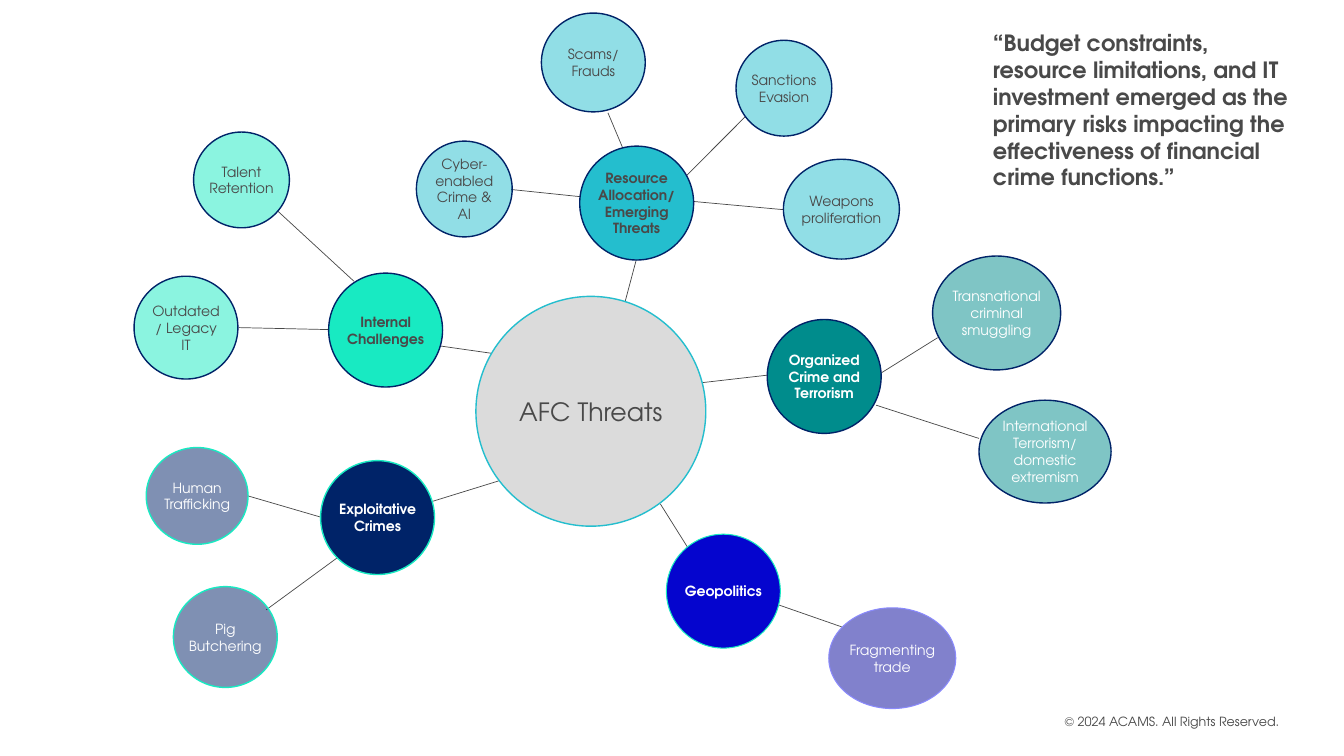
from pptx import Presentation
from pptx.dml.color import RGBColor
from pptx.enum import shapes, text
from pptx.oxml.ns import qn
from pptx.util import Inches, Pt
from lxml import etree

FONT = "TeX Gyre Adventor"
GREY = RGBColor(0x49, 0x49, 0x49)
WHITE = RGBColor(0xFF, 0xFF, 0xFF)
PALE = RGBColor(0xDB, 0xDB, 0xDB)
NAVY = RGBColor(0x00, 0x23, 0x68)
MINT = RGBColor(0x18, 0xEA, 0xC2)
AQUA = RGBColor(0x24, 0xBE, 0xCE)
TEAL = RGBColor(0x00, 0x8C, 0x8C)
BLUE = RGBColor(0x05, 0x05, 0xCE)
INDIGO = RGBColor(0x04, 0x04, 0x9A)
LILAC = RGBColor(0x8A, 0x8A, 0xFC)

HUB = 1.13  # diameter of a threat group

# Each group: label, (left, top), link to the centre,
# (fill, line, text) of the group, (fill, line) of its leaves, line width,
# leaves as (label, box, link to the group)
GROUPS = [
    ("Internal Challenges", (3.26, 2.71), (5.33, 3.57, 4.35, 3.43),
     (MINT, NAVY, GREY), (MINT, NAVY), 1, [
         ("Outdated/ Legacy IT", (1.33, 2.74, 1.03, 1.02), (3.26, 3.27, 2.37, 3.25)),
         ("Talent Retention", (1.92, 1.31, 0.95, 0.95), (3.51, 2.79, 2.75, 2.09))]),
    ("Exploitative Crimes", (3.18, 4.57), (5.37, 4.64, 4.27, 4.98),
     (NAVY, MINT, WHITE), (NAVY, MINT), 1, [
         ("Pig Butchering", (1.72, 5.82, 1.03, 1), (3.35, 5.53, 2.64, 6.05)),
         ("Human Trafficking", (1.45, 4.44, 1.01, 0.96), (3.18, 5.13, 2.46, 4.92))]),
    ("Resource Allocation/Emerging Threats", (5.75, 1.45), (6.15, 3.18, 6.31, 2.58),
     (AQUA, NAVY, GREY), (AQUA, NAVY), 1, [
         ("Scams/ Frauds", (5.37, 0.13, 1.03, 0.98), (6.19, 1.5, 6.03, 1.12)),
         ("Cyber-enabled Crime & AI", (4.13, 1.4, 0.95, 0.95), (5.84, 1.96, 5.07, 1.88)),
         ("Sanctions Evasion", (7.3, 0.4, 0.95, 0.95), (6.8, 1.75, 7.39, 1.16)),
         ("Weapons proliferation", (7.77, 1.58, 1.15, 0.99), (6.78, 1.99, 7.77, 2.08))]),
    ("Organized Crime and Terrorism", (7.61, 3.17), (6.93, 3.8, 7.63, 3.72),
     (TEAL, NAVY, WHITE), (TEAL, NAVY), 1, [
         ("International Terrorism/ domestic extremism", (9.71, 3.97, 1.31, 1.02),
          (8.69, 4.02, 9.71, 4.35)),
         ("Transnational criminal smuggling", (9.25, 2.54, 1.27, 1.13),
          (8.74, 3.7, 9.3, 3.35))]),
    ("Geopolitics", (6.61, 5.3), (6.55, 5, 6.82, 5.43),
     (BLUE, MINT, WHITE), (INDIGO, LILAC), 0.75, [
         ("Fragmenting trade", (8.22, 6.03, 1.26, 1), (7.72, 6, 8.35, 6.22))]),
]


def write(frame, words, size, color, bold=False):
    run = frame.paragraphs[0].add_run()
    run.text = words
    font = run.font
    font.name, font.size, font.bold = FONT, Pt(size), bold
    font.color.rgb = color


def inset(frame, left, top, right, bottom):
    frame.margin_left, frame.margin_top = Inches(left), Inches(top)
    frame.margin_right, frame.margin_bottom = Inches(right), Inches(bottom)
    frame.word_wrap = True


def add_link(slide, ends):
    link = slide.shapes.add_connector(
        shapes.MSO_CONNECTOR.STRAIGHT, *map(Inches, ends))
    link.line.color.rgb = GREY
    link.line.width = Pt(0.5)
    etree.SubElement(link._element.spPr, qn("a:effectLst"))


def add_node(slide, box, words, colors, width=1, size=10, bold=False, alpha=None):
    fill, edge, ink = colors
    node = slide.shapes.add_shape(shapes.MSO_SHAPE.OVAL, *map(Inches, box))
    node.shadow.inherit = False
    node.fill.solid()
    node.fill.fore_color.rgb = fill
    if alpha:
        tint = node._element.spPr.find(qn("a:solidFill"))[0]
        etree.SubElement(tint, qn("a:alpha"), val=str(alpha * 1000))
    node.line.color.rgb = edge
    node.line.width = Pt(width)
    frame = node.text_frame
    inset(frame, 0, 0, 0, 0)
    frame.vertical_anchor = text.MSO_ANCHOR.MIDDLE
    frame.paragraphs[0].alignment = text.PP_ALIGN.CENTER
    write(frame, words, size, ink, bold)


def add_map(slide, box):
    # Links lie behind every node
    for _, _, link, _, _, _, leaves in GROUPS:
        add_link(slide, link)
        for _, _, ends in leaves:
            add_link(slide, ends)
    # Centre, groups and their leaves
    add_node(slide, box, "AFC Threats", (PALE, AQUA, GREY), size=18)
    for label, spot, _, colors, tints, width, leaves in GROUPS:
        add_node(slide, (*spot, HUB, HUB), label, colors, width, bold=True)
        for words, place, _ in leaves:
            add_node(slide, place, words, (*tints, colors[2]), width, alpha=50)


def add_quote(slide, box):
    frame = slide.shapes.add_textbox(*map(Inches, box)).text_frame
    inset(frame, 0.1, 0.05, 0.1, 0.05)
    write(frame, "“Budget constraints, resource limitations, and IT investment "
          "emerged as the primary risks impacting the effectiveness of "
          "financial crime functions.”", 16, GREY, True)


def add_footer(slide, box):
    frame = slide.shapes.add_textbox(*map(Inches, box)).text_frame
    inset(frame, 0.35, 0.05, 0.1, 0.05)
    write(frame, "© 2024 ACAMS. All Rights Reserved.", 9, GREY)


def main():
    deck = Presentation()
    deck.slide_width, deck.slide_height = Inches(13.33), Inches(7.5)
    slide = deck.slides.add_slide(deck.slide_layouts[6])
    add_footer(slide, (10.21, 7.03, 2.76, 0.19))
    add_map(slide, (4.72, 2.94, 2.28, 2.28))
    add_quote(slide, (9.75, 0.24, 3.22, 1.72))
    deck.save("out.pptx")


if __name__ == "__main__":
    main()
